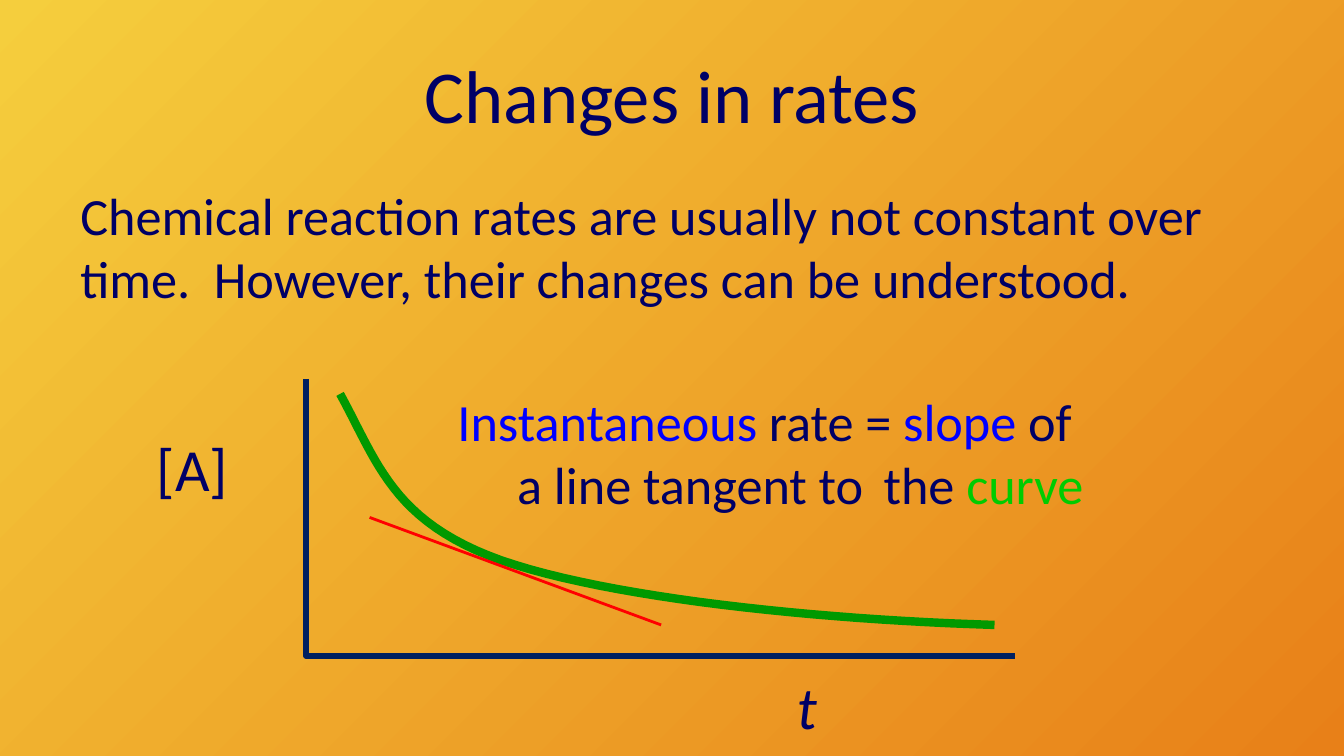
"""Build a slide on changing reaction rates with a concentration curve and its tangent."""
from dataclasses import dataclass

import lxml.etree
import pptx
import pptx.dml.color
import pptx.enum.shapes
import pptx.enum.text
import pptx.oxml.ns
import pptx.util

Pt = pptx.util.Pt
Align = pptx.enum.text.PP_ALIGN
Anchor = pptx.enum.text.MSO_ANCHOR
Point = tuple[float, float]

COLORS = {
    "yellow": "F5CE3D",
    "orange": "E88018",
    "navy": "000066",
    "axis": "002060",
    "blue": "0000FF",
    "green": "00CC00",
    "curve": "009900",
    "red": "FF0000",
}
LINE_BREAK = ("\n", "navy")


@dataclass
class Label:
    box: tuple[float, float, float, float]
    runs: list[tuple[str, str]]
    size: float = 28
    italic: bool = False
    align: Align = Align.LEFT
    anchor: Anchor = Anchor.TOP
    wrap: bool = False


@dataclass
class Stroke:
    points: list[Point]
    color: str
    width: float


LABELS = [
    Label((36, 16.5, 648, 67.5), [("Changes in rates", "navy")], 40,
          align=Align.CENTER, anchor=Anchor.MIDDLE, wrap=True),
    Label((36, 94.5, 648, 96),
          [("Chemical reaction rates are usually not constant over time.  "
            "However, their changes can be understood.", "navy")], wrap=True),
    Label((77, 227.5, 53.5, 46), [("[A]", "navy")], 32),
    Label((419.8, 355, 25, 46), [("t", "navy")], 32, italic=True),
    Label((234, 205.2, 353.5, 75),
          [("Instantaneous", "blue"), (" rate = ", "navy"), ("slope", "blue"),
           (" of ", "navy"), LINE_BREAK, ("the ", "navy"), ("curve", "green")],
          align=Align.RIGHT),
    Label((270, 239, 204.5, 41), [("a line tangent to", "navy")]),
]
AXES = Stroke([(164, 203), (164, 351.5), (543.6, 351.5)], "axis", 3)
CURVE_CONTROLS = [(182.2, 211), (202.3, 247.7), (210.2, 279.4), (268.6, 300.2),
                  (326.9, 320.4), (437, 331.9), (532.8, 334.8)]
TANGENT = Stroke([(198, 277.2), (354.2, 334.8)], "red", 1.5)


def rgb(name: str) -> pptx.dml.color.RGBColor:
    """Return the named colour."""
    return pptx.dml.color.RGBColor.from_string(COLORS[name])


def set_attributes(target: object, values: dict[str, object]) -> None:
    """Set each attribute of the target from the format values."""
    for name, value in values.items():
        setattr(target, name, value)


def bezier_points(controls: list[Point], steps: int = 24) -> list[Point]:
    """Sample a chain of cubic Bezier segments."""
    points = [controls[0]]
    for start in range(0, len(controls) - 1, 3):
        segment = controls[start:start + 4]
        for step in range(1, steps + 1):
            t = step / steps
            weights = ((1 - t) ** 3, 3 * t * (1 - t) ** 2, 3 * t * t * (1 - t), t ** 3)
            x, y = (sum(w * p[axis] for w, p in zip(weights, segment)) for axis in (0, 1))
            points.append((x, y))
    return points


def paint_background(slide: pptx.slide.Slide) -> None:
    """Fill the background with a diagonal gradient."""
    fill = slide.background.fill
    fill.gradient()
    fill.gradient_angle = 315
    for stop, color in zip(fill.gradient_stops, ("yellow", "orange")):
        stop.color.rgb = rgb(color)


def draw_label(slide: pptx.slide.Slide, label: Label) -> None:
    """Draw a text box with its coloured runs."""
    shape = slide.shapes.add_textbox(*map(Pt, label.box))
    set_attributes(shape.text_frame, {"word_wrap": label.wrap, "vertical_anchor": label.anchor})
    paragraph = shape.text_frame.paragraphs[0]
    paragraph.alignment = label.align
    for text, color in label.runs:
        if text == "\n":
            paragraph.add_line_break()
            continue
        run = paragraph.add_run()
        run.text = text
        set_attributes(run.font, {"name": "Calibri", "size": Pt(label.size),
                                  "italic": label.italic})
        run.font.color.rgb = rgb(color)


def format_line(shape: object, stroke: Stroke) -> None:
    """Give a shape the colour and width of the stroke."""
    shape.line.color.rgb = rgb(stroke.color)
    shape.line.width = Pt(stroke.width)


def draw_path(slide: pptx.slide.Slide, stroke: Stroke) -> None:
    """Draw an open freeform through the points of the stroke."""
    first, *rest = [(Pt(x), Pt(y)) for x, y in stroke.points]
    builder = slide.shapes.build_freeform(*first)
    builder.add_line_segments(rest, close=False)
    shape = builder.convert_to_shape()
    shape.fill.background()
    shape.shadow.inherit = False
    format_line(shape, stroke)


def draw_line(slide: pptx.slide.Slide, stroke: Stroke) -> None:
    """Draw a straight connector without a shadow."""
    ends = [Pt(value) for point in stroke.points for value in point]
    connector = slide.shapes.add_connector(pptx.enum.shapes.MSO_CONNECTOR.STRAIGHT, *ends)
    format_line(connector, stroke)
    lxml.etree.SubElement(connector._element.spPr, pptx.oxml.ns.qn("a:effectLst"))


def main() -> None:
    """Build and save the presentation."""
    presentation = pptx.Presentation()
    set_attributes(presentation, {"slide_width": Pt(720), "slide_height": Pt(405)})
    slide = presentation.slides.add_slide(presentation.slide_layouts[6])
    paint_background(slide)
    draw_path(slide, AXES)
    draw_path(slide, Stroke(bezier_points(CURVE_CONTROLS), "curve", 4.5))
    for label in LABELS:
        draw_label(slide, label)
    draw_line(slide, TANGENT)
    presentation.save("out.pptx")


if __name__ == "__main__":
    main()
